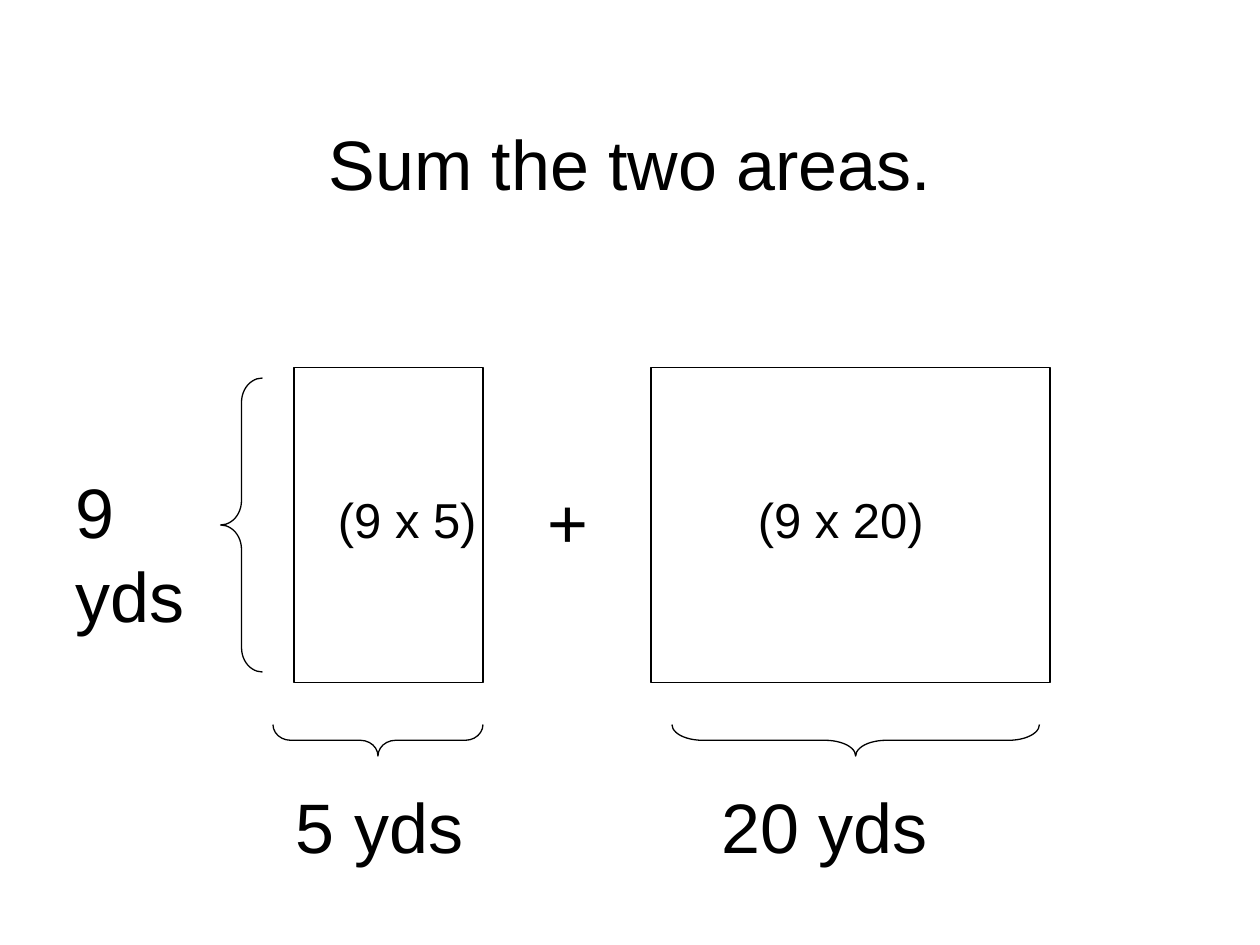
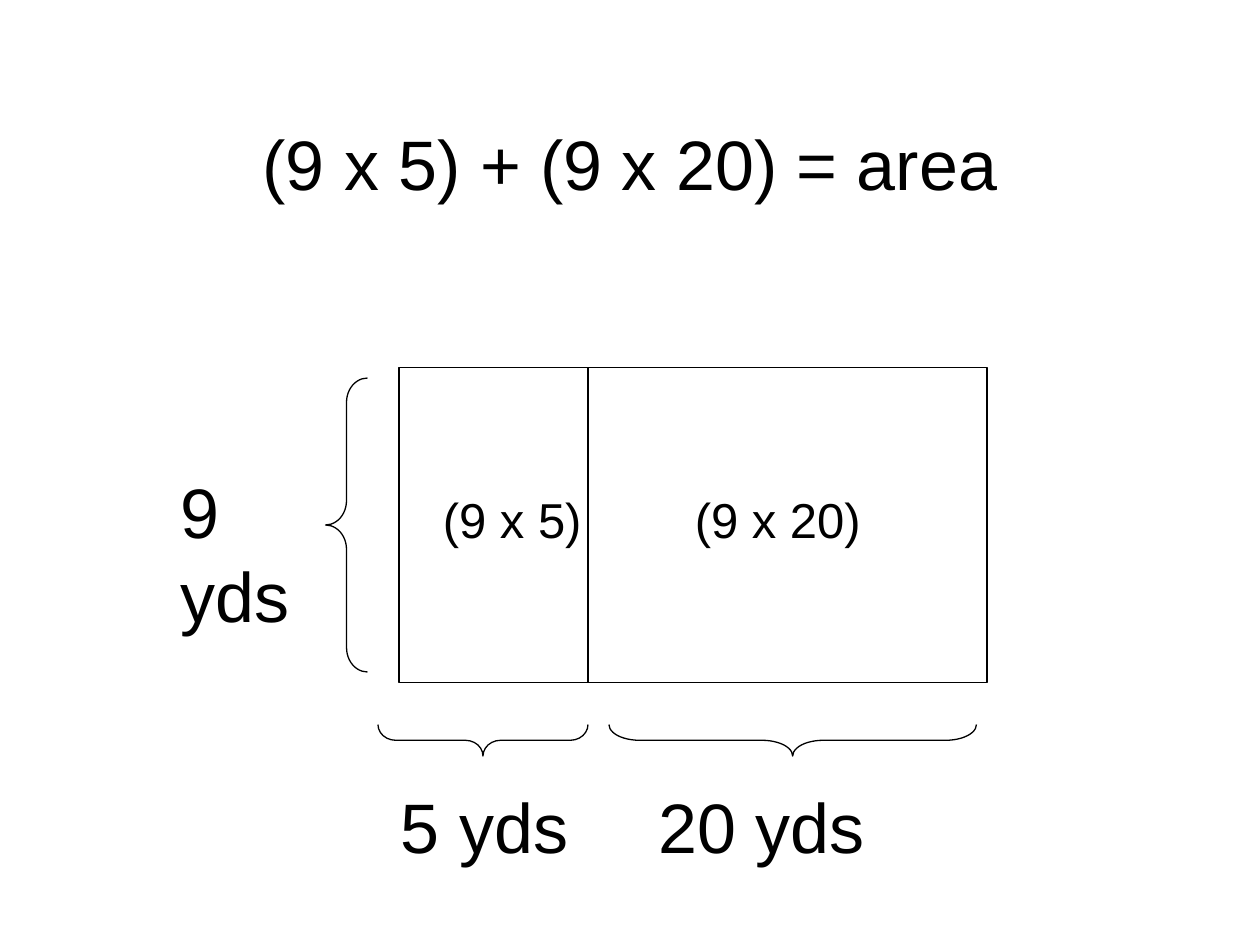
from pptx import Presentation
from pptx.dml.color import RGBColor
from pptx.enum.shapes import MSO_SHAPE
from pptx.enum.text import MSO_ANCHOR, MSO_AUTO_SIZE, PP_ALIGN
from pptx.oxml import parse_xml
from pptx.oxml.ns import nsdecls
from pptx.util import Inches, Pt

COLUMNS, ROWS = 120, 90
SLIDE_WIDTH, SLIDE_HEIGHT = Inches(10), Inches(7.5)
BLACK, WHITE = "000000", "FFFFFF"
FONT = "Arial"
LARGE, MEDIUM = 40, 28

# Rows and sizes shared by both area models
AREA_TOP, AREA_HEIGHT = 35, 30
NARROW_WIDTH, WIDE_WIDTH = 18, 38
BRACE_TOP, BRACE_DEPTH = 69, 3
LENGTH_TOP, PRODUCT_TOP = 74, 46


def color(hex_string):
    return RGBColor.from_string(hex_string)


def grid_box(left, top, width, height):
    """Turn grid columns and rows into slide lengths."""
    column, row = SLIDE_WIDTH / COLUMNS, SLIDE_HEIGHT / ROWS
    return [round(length) for length in
            (left * column, top * row, width * column, height * row)]


def add_text(slide, text, box, size=LARGE):
    shape = slide.shapes.add_textbox(*grid_box(*box))
    text_frame = shape.text_frame
    text_frame.word_wrap = True
    text_frame.text = text
    font = text_frame.paragraphs[0].runs[0].font
    font.name, font.size = FONT, Pt(size)
    font.color.rgb = color(BLACK)
    return text_frame


def add_title(slide, text):
    text_frame = add_text(slide, text, (9, 8, 102, 15))
    text_frame.vertical_anchor = MSO_ANCHOR.MIDDLE
    text_frame.paragraphs[0].alignment = PP_ALIGN.CENTER


def add_label(slide, text, box, size=LARGE, indent=0):
    """Add a growing label, its text indented by a number of points."""
    text_frame = add_text(slide, text, box, size)
    text_frame.auto_size = MSO_AUTO_SIZE.SHAPE_TO_FIT_TEXT
    properties = text_frame.paragraphs[0]._p.get_or_add_pPr()
    properties.set("marL", str(Pt(indent)))
    properties.append(parse_xml(
        f'<a:spcBef {nsdecls("a")}><a:spcPct val="50000"/></a:spcBef>'))


def add_outline(slide, kind, box, fill=None):
    shape = slide.shapes.add_shape(kind, *grid_box(*box))
    shape.shadow.inherit = False
    if fill:
        shape.fill.solid()
        shape.fill.fore_color.rgb = color(fill)
    else:
        shape.fill.background()
    shape.line.color.rgb = color(BLACK)
    shape.line.width = Pt(0.75)
    return shape


def add_height_brace(slide, left):
    brace = add_outline(slide, MSO_SHAPE.LEFT_BRACE, (left, 36, 4, 28))
    brace.adjustments[0] = 0.58


def add_width_brace(slide, left, width, curve):
    """Add a brace that opens upwards: a left brace turned about its centre."""
    brace_left = left + (width - BRACE_DEPTH) / 2
    brace_top = BRACE_TOP - (width - BRACE_DEPTH) / 2
    brace = add_outline(slide, MSO_SHAPE.LEFT_BRACE,
                        (brace_left, brace_top, BRACE_DEPTH, width))
    brace.rotation = 270
    brace.adjustments[0] = curve


def add_area_model(slide, narrow_left, wide_left):
    for left, width, fill in ((narrow_left, NARROW_WIDTH, None),
                              (wide_left, WIDE_WIDTH, WHITE)):
        add_outline(slide, MSO_SHAPE.RECTANGLE,
                    (left, AREA_TOP, width, AREA_HEIGHT), fill)

    add_label(slide, "9 yds", (narrow_left - 22, 44, 15, 17.2))
    add_label(slide, "5 yds", (narrow_left - 1, LENGTH_TOP, 20, 9.2))
    add_label(slide, "20 yds", (wide_left, LENGTH_TOP, 37, 9.2), indent=33.4)

    add_height_brace(slide, narrow_left - 7)
    add_width_brace(slide, wide_left + 2, 35, 0.97)
    add_width_brace(slide, narrow_left - 2, 20, 0.56)

    add_label(slide, "(9 x 5)", (narrow_left + 3, PRODUCT_TOP, 16, 6.8), MEDIUM)
    add_label(slide, "(9 x 20)", (wide_left + 9, PRODUCT_TOP, 25, 6.8), MEDIUM)


def add_model_slide(presentation, title, narrow_left, wide_left):
    slide = presentation.slides.add_slide(presentation.slide_layouts[6])
    add_title(slide, title)
    add_area_model(slide, narrow_left, wide_left)
    return slide


def main():
    presentation = Presentation()
    presentation.slide_width = SLIDE_WIDTH
    presentation.slide_height = SLIDE_HEIGHT

    separate = add_model_slide(presentation, "Sum the two areas.", 28, 62)
    add_label(separate, "+", (51, 45, 9, 9.2))

    joined_left = 38
    add_model_slide(presentation, "(9 x 5) + (9 x 20) = area",
                    joined_left, joined_left + NARROW_WIDTH)

    presentation.save("out.pptx")


if __name__ == "__main__":
    main()
